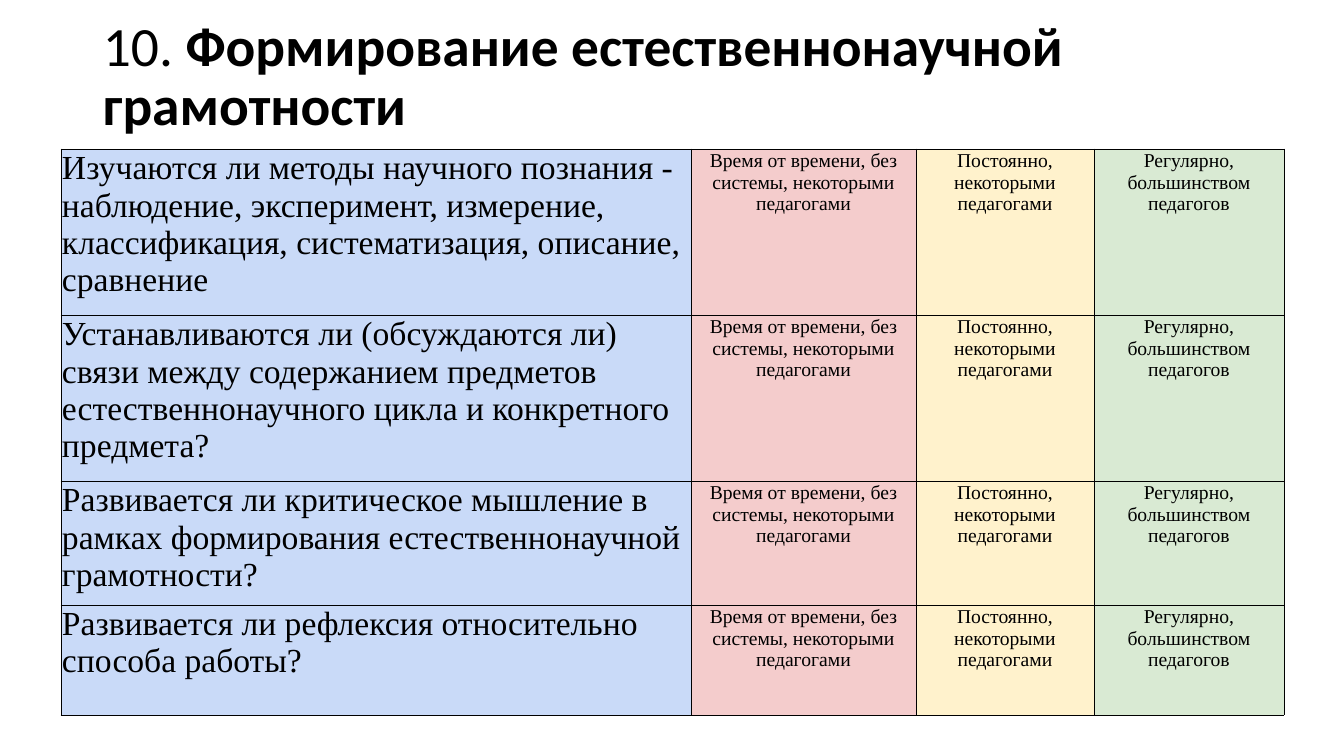
from lxml import etree
from pptx import Presentation
from pptx.dml.color import RGBColor
from pptx.enum.text import MSO_ANCHOR, PP_ALIGN
from pptx.oxml.ns import qn
from pptx.util import Pt

MIDDLE = MSO_ANCHOR.MIDDLE
LEFT, CENTER = PP_ALIGN.LEFT, PP_ALIGN.CENTER

TITLE_RUNS = [("10. ", False), ("Формирование естественнонаучной грамотности", True)]
QUESTIONS = [
    "Изучаются ли методы научного познания - наблюдение, эксперимент, измерение, "
    "классификация, систематизация, описание, сравнение",
    "Устанавливаются ли (обсуждаются ли) связи между содержанием предметов "
    "естественнонаучного цикла и конкретного предмета?",
    "Развивается ли критическое мышление в рамках формирования "
    "естественнонаучной грамотности?",
    "Развивается ли рефлексия относительно способа работы?",
]
ANSWERS = [
    "Время от времени, без системы, некоторыми педагогами",
    "Постоянно, некоторыми педагогами",
    "Регулярно, большинством педагогов",
]

THEME = {
    "title_font": "Calibri",
    "table_font": "Times New Roman",
    "title_size": 39.6,
    "question_size": 24,
    "answer_size": 14,
    "text": "000000",
    "border": "000000",
    "border_width": 0.5,
    "column_fills": ["C9DAF8", "F4CCCC", "FFF2CC", "D9EAD3"],
}

EMU_PER_PX = 914400 / 100.8
SLIDE_SIZE = (1344, 756)
TITLE_BOX = (93, 40, 1159, 76)
TABLE_ORIGIN = (61, 149)
COLUMN_WIDTHS = [630, 225, 178, 190]
ROW_HEIGHTS = [166, 166, 124, 110]
CELL_MARGIN = 1


def px(length):
    return round(length * EMU_PER_PX)


def add_run(paragraph, text, font_name, size, bold=False):
    run = paragraph.add_run()
    run.text = text
    run.font.name = font_name
    run.font.size = Pt(size)
    run.font.bold = bold
    run.font.color.rgb = RGBColor.from_string(THEME["text"])


def add_borders(cell):
    properties = cell._tc.get_or_add_tcPr()
    for side in ("a:lnL", "a:lnR", "a:lnT", "a:lnB"):
        line = etree.SubElement(properties, qn(side), w=str(Pt(THEME["border_width"])))
        fill = etree.SubElement(line, qn("a:solidFill"))
        etree.SubElement(fill, qn("a:srgbClr"), val=THEME["border"])


def add_title(slide):
    frame = slide.shapes.add_textbox(*map(px, TITLE_BOX)).text_frame
    frame.word_wrap = True
    frame.vertical_anchor = MIDDLE
    paragraph = frame.paragraphs[0]
    paragraph.line_spacing = 0.9
    for text, bold in TITLE_RUNS:
        add_run(paragraph, text, THEME["title_font"], THEME["title_size"], bold)


def fill_cell(cell, text, size, alignment, color):
    cell.margin_left = cell.margin_right = cell.margin_top = px(CELL_MARGIN)
    cell.margin_bottom = 0
    add_borders(cell)
    cell.fill.solid()
    cell.fill.fore_color.rgb = RGBColor.from_string(color)
    paragraph = cell.text_frame.paragraphs[0]
    paragraph.alignment = alignment
    add_run(paragraph, text, THEME["table_font"], size)


def add_survey_table(slide):
    bounds = (*TABLE_ORIGIN, sum(COLUMN_WIDTHS), sum(ROW_HEIGHTS))
    table = slide.shapes.add_table(
        len(QUESTIONS), len(COLUMN_WIDTHS), *map(px, bounds)).table
    table.first_row = table.horz_banding = False
    for column, width in zip(table.columns, COLUMN_WIDTHS):
        column.width = px(width)
    for row, height, question in zip(table.rows, ROW_HEIGHTS, QUESTIONS):
        row.height = px(height)
        texts = [question, *ANSWERS]
        for index, (cell, text) in enumerate(zip(row.cells, texts)):
            size = THEME["answer_size"] if index else THEME["question_size"]
            alignment = CENTER if index else LEFT
            fill_cell(cell, text, size, alignment, THEME["column_fills"][index])


def main():
    presentation = Presentation()
    presentation.slide_width, presentation.slide_height = map(px, SLIDE_SIZE)
    slide = presentation.slides.add_slide(presentation.slide_layouts[6])
    add_title(slide)
    add_survey_table(slide)
    presentation.save("out.pptx")


if __name__ == "__main__":
    main()
